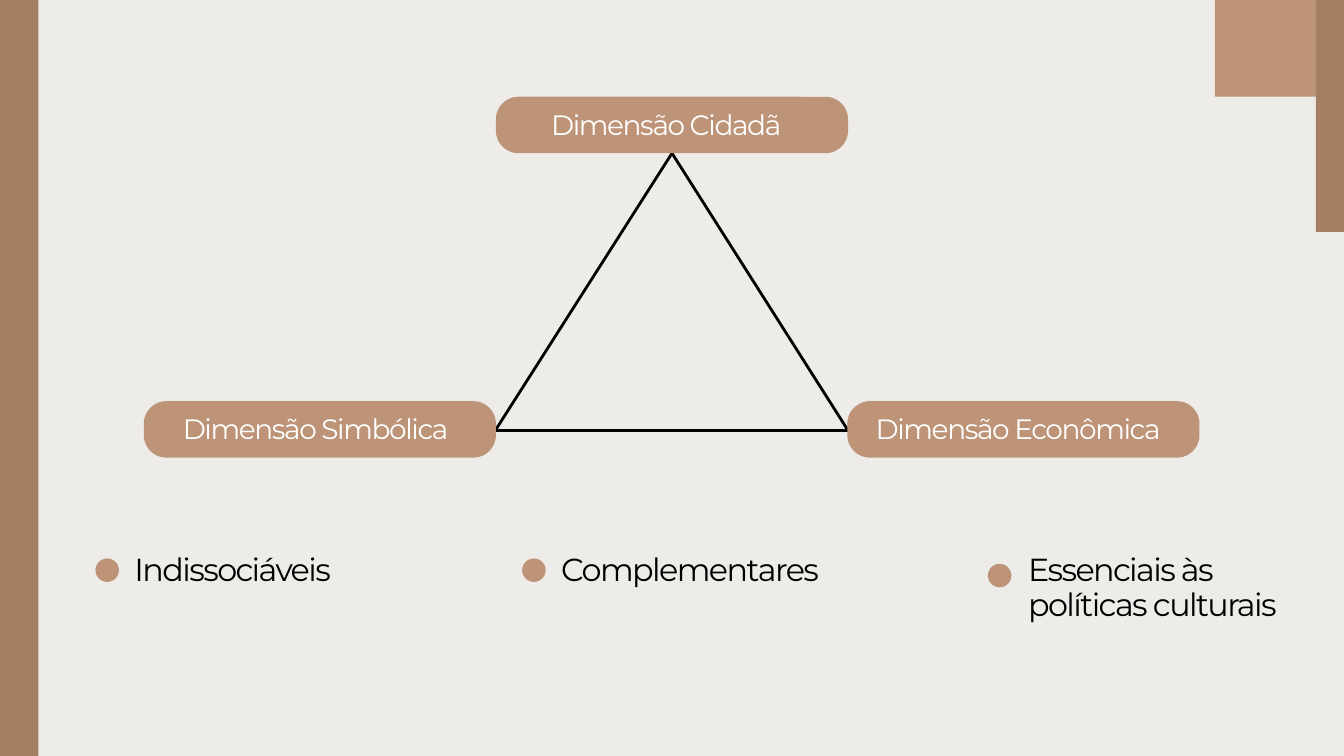
"""Build a slide with three cultural dimensions around a triangle."""
from typing import NamedTuple

from lxml.etree import SubElement
from pptx import Presentation
from pptx.dml.color import RGBColor
from pptx.enum.shapes import MSO_CONNECTOR as Connector, MSO_SHAPE as Shape
from pptx.enum.text import MSO_ANCHOR as Anchor, PP_ALIGN as Align
from pptx.oxml.ns import qn
from pptx.slide import Slide
from pptx.util import Inches, Pt

COLORS = {
    "background": "EDECE8",
    "brown": "A67E62",
    "tan": "BD9477",
    "white": "FFFFFF",
    "black": "000000",
}
PILL_WIDTH, PILL_HEIGHT, PILL_CORNER = 5.24, 0.84, 0.4
LABEL_OFFSET, LABEL_HEIGHT = 0.2, 0.48
DOT_SIZE = 0.35
TRAIT_TOP, TRAIT_WIDTH = 8.23, 3.98


class Box(NamedTuple):
    """Place and size in inches."""
    left: float
    top: float
    width: float
    height: float


class TextStyle(NamedTuple):
    """Type size, line pitch and tracking in points, with a colour name."""
    size: float
    pitch: float
    tracking: float
    color: str


class Dimension(NamedTuple):
    """A pill and the place of its label."""
    text: str
    left: float
    top: float
    text_left: float
    text_width: float


class Trait(NamedTuple):
    """A dotted statement under the triangle."""
    text: str
    dot_left: float
    dot_top: float
    text_left: float
    text_height: float


class Edge(NamedTuple):
    """A straight line between two points."""
    start: tuple[float, float]
    end: tuple[float, float]


LABEL_STYLE = TextStyle(30, 33, -1.5, "white")
TRAIT_STYLE = TextStyle(34.1, 37.5, -1.7, "black")

BARS = [
    (Box(0, 0, 0.57, 11.25), "brown"),
    (Box(18.08, 0, 1.92, 1.44), "tan"),
    (Box(19.58, 0, 0.42, 3.45), "brown"),
]
EDGES = [
    Edge((10, 2.28), (12.61, 6.39)),
    Edge((6.81, 6.41), (13.19, 6.41)),
    Edge((7.38, 6.39), (10, 2.28)),
]
DIMENSIONS = [
    Dimension("Dimensão Econômica", 12.61, 5.97, 13.03, 4.55),
    Dimension("Dimensão Simbólica", 2.14, 5.97, 2.72, 4.33),
    Dimension("Dimensão Cidadã", 7.38, 1.44, 8.2, 3.78),
]
TRAITS = [
    Trait("Indissociáveis", 1.42, 8.31, 2, 0.54),
    Trait("Complementares", 7.77, 8.31, 8.35, 0.54),
    Trait("Essenciais às políticas culturais", 14.7, 8.39, 15.3, 1.06),
]


def rgb(name: str) -> RGBColor:
    """Return the named colour."""
    return RGBColor.from_string(COLORS[name])


def add_filled(slide: Slide, kind: Shape, box: Box, color: str):
    """Draw a preset shape with a plain fill and no outline."""
    shape = slide.shapes.add_shape(kind, *map(Inches, box))
    shape.shadow.inherit = False
    shape.fill.solid()
    shape.fill.fore_color.rgb = rgb(color)
    shape.line.fill.background()
    return shape


def add_text(slide: Slide, text: str, box: Box, style: TextStyle) -> None:
    """Draw a text box without margins."""
    frame = slide.shapes.add_textbox(*map(Inches, box)).text_frame
    frame_format = {
        "word_wrap": True,
        "vertical_anchor": Anchor.TOP,
        "margin_left": 0,
        "margin_top": 0,
        "margin_right": 0,
        "margin_bottom": 0,
    }
    for name, value in frame_format.items():
        setattr(frame, name, value)
    paragraph = frame.paragraphs[0]
    paragraph.alignment = Align.LEFT
    paragraph.line_spacing = Pt(style.pitch)
    run = paragraph.add_run()
    run.text = text
    for name, value in {"name": "Montserrat", "size": Pt(style.size)}.items():
        setattr(run.font, name, value)
    run.font.color.rgb = rgb(style.color)
    run._r.get_or_add_rPr().set("spc", str(round(style.tracking * 100)))


def add_edge(slide: Slide, edge: Edge) -> None:
    """Draw one side of the triangle."""
    line = slide.shapes.add_connector(
        Connector.STRAIGHT, *map(Inches, edge.start + edge.end))
    line.line.width = Pt(3)
    line.line.color.rgb = rgb("black")
    SubElement(line._element.spPr, qn("a:effectLst"))


def add_dimension(slide: Slide, item: Dimension) -> None:
    """Draw a pill with its label."""
    box = Box(item.left, item.top, PILL_WIDTH, PILL_HEIGHT)
    pill = add_filled(slide, Shape.ROUNDED_RECTANGLE, box, "tan")
    pill.adjustments[0] = PILL_CORNER
    label = Box(item.text_left, item.top + LABEL_OFFSET, item.text_width, LABEL_HEIGHT)
    add_text(slide, item.text, label, LABEL_STYLE)


def add_trait(slide: Slide, item: Trait) -> None:
    """Draw a dot and its statement."""
    dot = Box(item.dot_left, item.dot_top, DOT_SIZE, DOT_SIZE)
    add_filled(slide, Shape.OVAL, dot, "tan")
    box = Box(item.text_left, TRAIT_TOP, TRAIT_WIDTH, item.text_height)
    add_text(slide, item.text, box, TRAIT_STYLE)


def main() -> None:
    """Build and save the presentation."""
    presentation = Presentation()
    presentation.slide_width = Inches(20)
    presentation.slide_height = Inches(11.25)
    slide = presentation.slides.add_slide(presentation.slide_layouts[6])
    slide.background.fill.solid()
    slide.background.fill.fore_color.rgb = rgb("background")
    for edge in EDGES:
        add_edge(slide, edge)
    for dimension in DIMENSIONS:
        add_dimension(slide, dimension)
    for trait in TRAITS:
        add_trait(slide, trait)
    for box, color in BARS:
        add_filled(slide, Shape.RECTANGLE, box, color)
    presentation.save("out.pptx")


if __name__ == "__main__":
    main()
